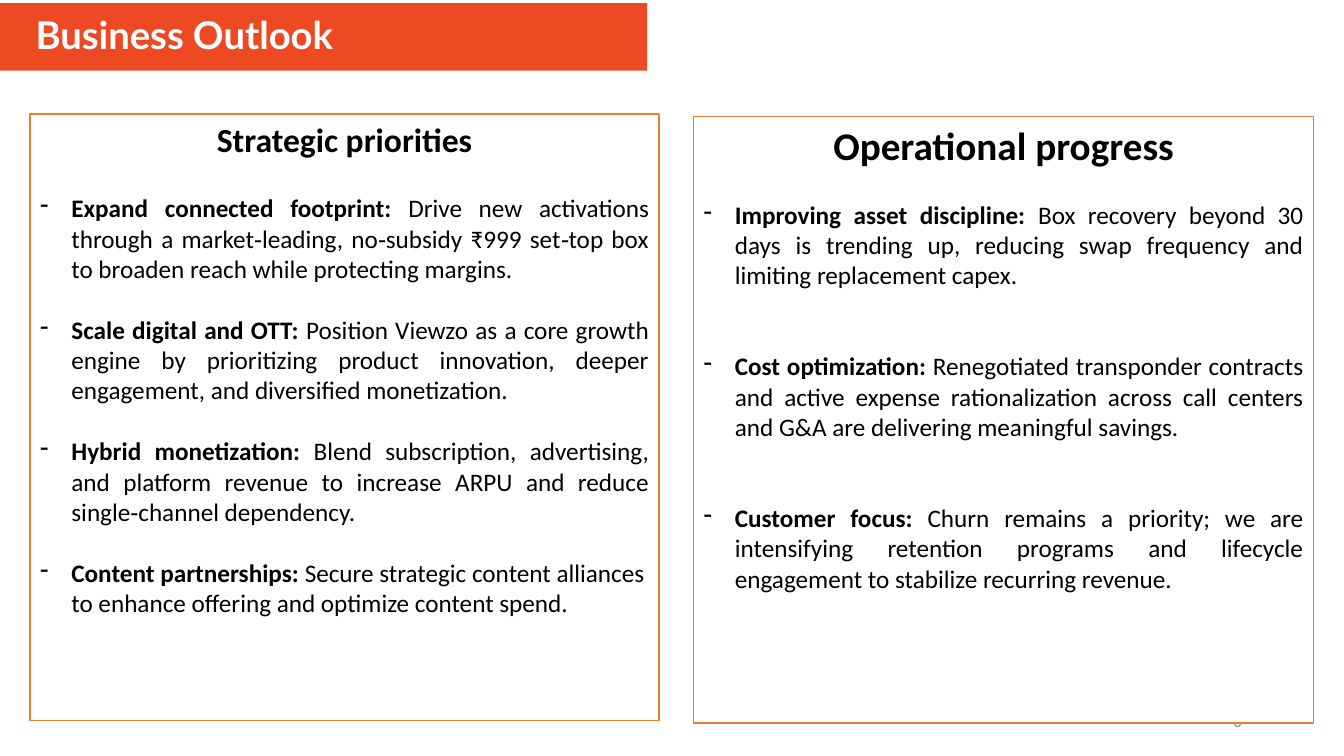
from lxml import etree
from pptx import Presentation
from pptx.dml.color import RGBColor
from pptx.enum.shapes import MSO_SHAPE
from pptx.enum.text import MSO_ANCHOR, PP_ALIGN
from pptx.oxml.ns import qn
from pptx.util import Cm, Pt

RECTANGLE = MSO_SHAPE.RECTANGLE
TOP, MIDDLE = MSO_ANCHOR.TOP, MSO_ANCHOR.MIDDLE
LEFT, CENTER = PP_ALIGN.LEFT, PP_ALIGN.CENTER
RIGHT, JUSTIFY = PP_ALIGN.RIGHT, PP_ALIGN.JUSTIFY

BANNER_RED = RGBColor(0xED, 0x4A, 0x24)
BORDER_ORANGE = RGBColor(0xED, 0x7D, 0x31)
WHITE = RGBColor(0xFF, 0xFF, 0xFF)
BLACK = RGBColor(0x00, 0x00, 0x00)
GREY = RGBColor(0x8C, 0x8C, 0x8C)

PRIORITIES = [
    ("Expand connected footprint: ",
     "Drive new activations through a market‑leading, no‑subsidy ₹999 set‑top box "
     "to broaden reach while protecting margins.", JUSTIFY),
    ("Scale digital and OTT: ",
     "Position Viewzo as a core growth engine by prioritizing product innovation, "
     "deeper engagement, and diversified monetization.", JUSTIFY),
    ("Hybrid monetization: ",
     "Blend subscription, advertising, and platform revenue to increase ARPU and "
     "reduce single‑channel dependency.", JUSTIFY),
    ("Content partnerships: ",
     "Secure strategic content alliances to enhance offering and optimize content "
     "spend.", LEFT),
]
PROGRESS = [
    ("Improving asset discipline: ",
     "Box recovery beyond 30 days is trending up, reducing swap frequency and "
     "limiting replacement capex.", JUSTIFY),
    ("Cost optimization: ",
     "Renegotiated transponder contracts and active expense rationalization across "
     "call centers and G&A are delivering meaningful savings.", JUSTIFY),
    ("Customer focus: ",
     "Churn remains a priority; we are intensifying retention programs and lifecycle "
     "engagement to stabilize recurring revenue.", JUSTIFY),
]


def style(span, size, color, bold=False, name="Calibri"):
    """Set the font of a run."""
    font = span.font
    font.name, font.size, font.bold = name, Pt(size), bold
    font.color.rgb = color


def add_rectangle(page, box, fill, anchor):
    """Add a flat, borderless rectangle that wraps its text."""
    shape = page.shapes.add_shape(RECTANGLE, *map(Cm, box))
    shape.shadow.inherit = False
    shape.fill.solid()
    shape.fill.fore_color.rgb = fill
    shape.line.fill.background()
    shape.text_frame.word_wrap = True
    shape.text_frame.vertical_anchor = anchor
    return shape


def set_dash(para):
    """Give a paragraph a hanging dash bullet."""
    properties = para._p.get_or_add_pPr()
    properties.set("marL", str(Cm(0.79)))
    properties.set("indent", str(-Cm(0.79)))
    etree.SubElement(properties, qn("a:buChar")).set("char", "-")


def add_page_number(page, box, number):
    """Add the right-aligned page number."""
    frame = page.shapes.add_textbox(*map(Cm, box)).text_frame
    frame.word_wrap = True
    frame.vertical_anchor = MIDDLE
    frame.text = number
    para = frame.paragraphs[0]
    para.alignment = RIGHT
    style(para.runs[0], 12, GREY)


def add_banner(page, box, title):
    """Add the coloured title banner."""
    frame = add_rectangle(page, box, BANNER_RED, MIDDLE).text_frame
    frame.margin_left = Cm(0.9)
    frame.text = title
    para = frame.paragraphs[0]
    para.alignment = LEFT
    para.line_spacing = 0.9
    style(para.runs[0], 27.3, WHITE, True, "Lato")


def add_panel(page, box, heading, heading_size, heading_gap, points, point_gap):
    """Add a bordered panel with a heading and dashed points."""
    panel = add_rectangle(page, box, WHITE, TOP)
    panel.line.color.rgb = BORDER_ORANGE
    panel.line.width = Pt(1)
    frame = panel.text_frame
    frame.text = heading
    title = frame.paragraphs[0]
    title.alignment = CENTER
    style(title.runs[0], heading_size, BLACK, True)
    for index, (lead, detail, alignment) in enumerate(points):
        para = frame.add_paragraph()
        para.alignment = alignment
        para.space_before = Pt(point_gap if index else heading_gap)
        set_dash(para)
        for text, bold in ((lead, True), (detail, False)):
            span = para.add_run()
            span.text = text
            style(span, 18, BLACK, bold)


def add_outlook(deck):
    """Add the business outlook slide."""
    page = deck.slides.add_slide(deck.slide_layouts[6])
    add_page_number(page, (23.93, 17.65, 7.62, 1.02), "6")
    add_banner(page, (0, 0.08, 16.31, 1.7), "Business Outlook")
    add_panel(page, (0.76, 2.87, 15.85, 15.29),
              "Strategic priorities", 24, 24, PRIORITIES, 22)
    add_panel(page, (17.48, 2.93, 15.62, 15.29),
              "Operational progress", 28, 22, PROGRESS, 43.5)


def main():
    """Build and save the deck."""
    deck = Presentation()
    deck.slide_width, deck.slide_height = Cm(33.87), Cm(19.05)
    add_outlook(deck)
    deck.save("out.pptx")


if __name__ == "__main__":
    main()
